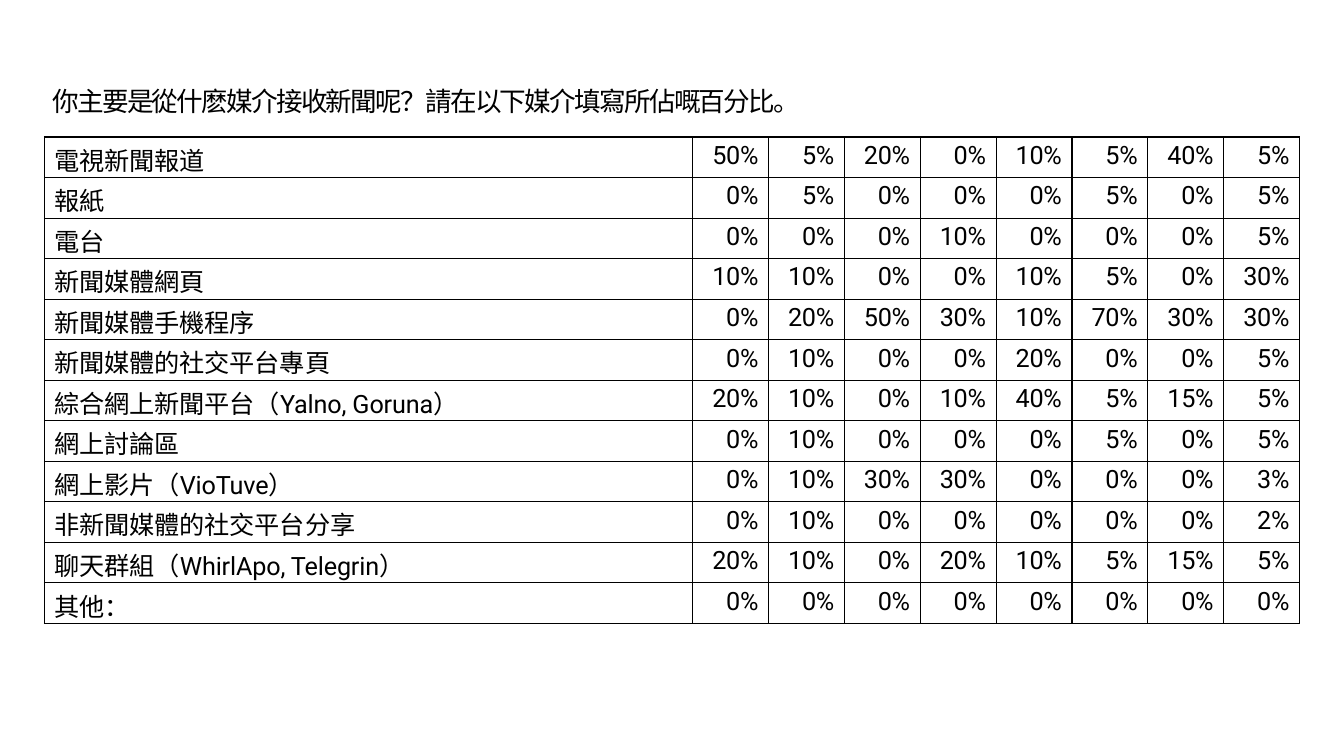
from dataclasses import dataclass
from itertools import groupby

from lxml import etree
from pptx import Presentation
from pptx import util as u
from pptx.dml.color import RGBColor
from pptx.enum import text
from pptx.oxml.ns import qn


@dataclass(frozen=True)
class Theme:
    ink: str = "000000"
    paper: str = "FFFFFF"
    cjk: str = "Noto Sans CJK TC"
    latin: str = "Roboto"
    title_size: float = 19
    body_size: float = 18
    title_spacing: float = -1.2
    label_spacing: float = -0.1
    share_spacing: float = -0.2
    border: float = 1


@dataclass(frozen=True)
class Grid:
    left: float = 0.44
    top: float = 1.36
    width: float = 12.45
    label_width: float = 6.43
    row_height: float = 0.4
    pad_top: float = 0.04
    pad_side: float = 0.1

    def share_width(self, count: int) -> float:
        return (self.width - self.label_width) / count


@dataclass(frozen=True)
class Medium:
    label: str
    shares: tuple[int, ...]


THEME = Theme()
GRID = Grid()
QUESTION = "你主要是從什麽媒介接收新聞呢？請在以下媒介填寫所佔嘅百分比。"
MEDIA = [
    Medium("電視新聞報道", (50, 5, 20, 0, 10, 5, 40, 5)),
    Medium("報紙", (0, 5, 0, 0, 0, 5, 0, 5)),
    Medium("電台", (0, 0, 0, 10, 0, 0, 0, 5)),
    Medium("新聞媒體網頁", (10, 10, 0, 0, 10, 5, 0, 30)),
    Medium("新聞媒體手機程序", (0, 20, 50, 30, 10, 70, 30, 30)),
    Medium("新聞媒體的社交平台專頁", (0, 10, 0, 0, 20, 0, 0, 5)),
    Medium("綜合網上新聞平台（Yalno, Goruna）", (20, 10, 0, 10, 40, 5, 15, 5)),
    Medium("網上討論區", (0, 10, 0, 0, 0, 5, 0, 5)),
    Medium("網上影片（VioTuve）", (0, 10, 30, 30, 0, 0, 0, 3)),
    Medium("非新聞媒體的社交平台分享", (0, 10, 0, 0, 0, 0, 0, 2)),
    Medium("聊天群組（WhirlApo, Telegrin）", (20, 10, 0, 20, 10, 5, 15, 5)),
    Medium("其他：", (0, 0, 0, 0, 0, 0, 0, 0)),
]


def write(p, words: str, size: float, spacing: float) -> None:
    for is_latin, chars in groupby(words, str.isascii):
        r = p.add_run()
        r.text = "".join(chars)
        r.font.size = u.Pt(size)
        r.font.color.rgb = RGBColor.from_string(THEME.ink)
        r.font.name = THEME.latin if is_latin else THEME.cjk
        props = r.font._element
        props.set("spc", str(round(spacing * 100)))
        etree.SubElement(props, qn("a:ea")).set("typeface", THEME.cjk)


def draw_borders(cell) -> None:
    props = cell._tc.get_or_add_tcPr()
    for side in ("a:lnL", "a:lnR", "a:lnT", "a:lnB"):
        line = etree.SubElement(props, qn(side), w=str(u.Pt(THEME.border)))
        fill = etree.SubElement(line, qn("a:solidFill"))
        etree.SubElement(fill, qn("a:srgbClr"), val=THEME.ink)


def fill_cell(cell, words: str, spacing: float, is_label: bool) -> None:
    cell.margin_left = cell.margin_right = cell.margin_bottom = 0
    cell.margin_top = u.Inches(GRID.pad_top)
    draw_borders(cell)
    cell.fill.solid()
    cell.fill.fore_color.rgb = RGBColor.from_string(THEME.paper)
    p = cell.text_frame.paragraphs[0]
    p.alignment = text.PP_ALIGN.LEFT if is_label else text.PP_ALIGN.RIGHT
    indent = "marL" if is_label else "marR"
    p._p.get_or_add_pPr().set(indent, str(u.Inches(GRID.pad_side)))
    write(p, words, THEME.body_size, spacing)


def add_media_table(s) -> None:
    count = len(MEDIA[0].shares)
    table = s.shapes.add_table(
        len(MEDIA), count + 1, u.Inches(GRID.left), u.Inches(GRID.top),
        u.Inches(GRID.width), u.Inches(GRID.row_height * len(MEDIA))).table
    table.first_row = table.horz_banding = False
    widths = [GRID.label_width] + [GRID.share_width(count)] * count
    for column, width in zip(table.columns, widths):
        column.width = u.Inches(width)
    for row, medium in zip(table.rows, MEDIA):
        row.height = u.Inches(GRID.row_height)
        label, *shares = row.cells
        fill_cell(label, medium.label, THEME.label_spacing, True)
        for cell, share in zip(shares, medium.shares):
            fill_cell(cell, f"{share}%", THEME.share_spacing, False)


def add_question(s) -> None:
    sp = s.shapes.add_textbox(
        u.Inches(0.52), u.Inches(0.83), u.Inches(7.52), u.Inches(0.34))
    tf = sp.text_frame
    tf.word_wrap = True
    tf.auto_size = text.MSO_AUTO_SIZE.SHAPE_TO_FIT_TEXT
    tf.margin_left = tf.margin_right = tf.margin_bottom = 0
    tf.margin_top = u.Inches(0.01)
    write(tf.paragraphs[0], QUESTION, THEME.title_size, THEME.title_spacing)


def main() -> None:
    prs = Presentation()
    prs.slide_width, prs.slide_height = u.Inches(13.33), u.Inches(7.5)
    s = prs.slides.add_slide(prs.slide_layouts[6])
    add_media_table(s)
    add_question(s)
    prs.save("out.pptx")


if __name__ == "__main__":
    main()
